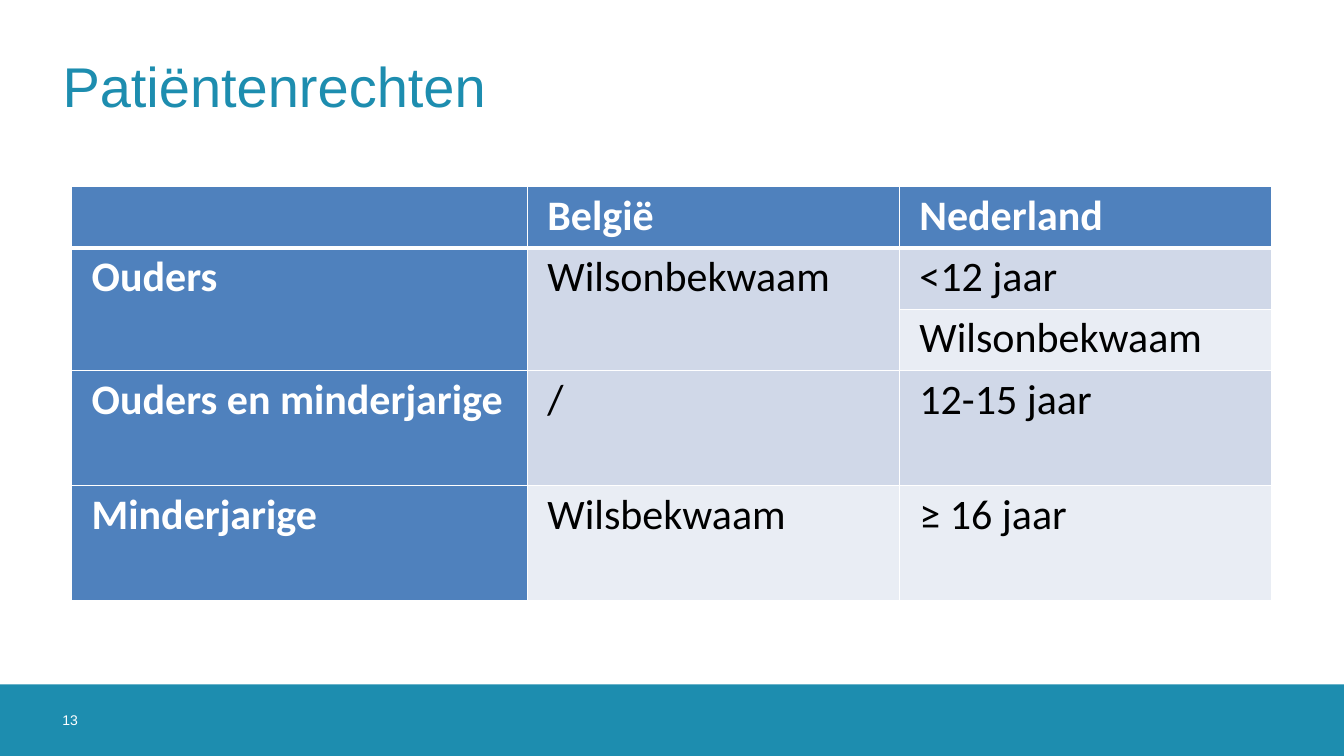
import pptx
import pptx.util
import pptx.dml.color
import pptx.enum.shapes
import pptx.enum.text
import pptx.oxml
import pptx.oxml.ns

Inches = pptx.util.Inches
Pt = pptx.util.Pt
RGBColor = pptx.dml.color.RGBColor
Anchor = pptx.enum.text.MSO_ANCHOR

TEAL = RGBColor(0x1D, 0x8D, 0xAF)
BLUE = RGBColor(0x4F, 0x81, 0xBD)
BAND_DARK = RGBColor(0xD0, 0xD8, 0xE8)
BAND_LIGHT = RGBColor(0xE9, 0xED, 0xF4)
WHITE = RGBColor(0xFF, 0xFF, 0xFF)
BLACK = RGBColor(0, 0, 0)

WIDTH = Inches(13.33)
HEIGHT = Inches(7.5)
LEFT_MARGIN = Inches(0.62)
FOOTER_TOP = Inches(6.79)

COLUMN_WIDTHS = [4.52, 3.69, 3.69]
ROW_HEIGHTS = [0.61, 0.61, 0.61, 1.14, 1.14]
RIGHTS = [
    ["", "België", "Nederland"],
    ["Ouders", "Wilsonbekwaam", "<12 jaar"],
    ["", "", "Wilsonbekwaam"],
    ["Ouders en minderjarige", "/", "12-15 jaar"],
    ["Minderjarige", "Wilsbekwaam", "≥ 16 jaar"],
]


def clear_margins(frame):
    frame.margin_left = frame.margin_right = 0
    frame.margin_top = frame.margin_bottom = 0


def style_font(para, name, size, color, bold=False):
    para.font.name = name
    para.font.size = Pt(size)
    para.font.color.rgb = color
    para.font.bold = bold


def add_title(page, text):
    title = page.shapes.title
    title.left, title.top = LEFT_MARGIN, Inches(0.49)
    title.width, title.height = Inches(12.1), Inches(0.69)
    frame = title.text_frame
    clear_margins(frame)
    frame.vertical_anchor = Anchor.BOTTOM
    frame.text = text
    para = frame.paragraphs[0]
    para.alignment = pptx.enum.text.PP_ALIGN.LEFT
    style_font(para, "Arial", 40, TEAL)


def add_footer(page, number):
    band = page.shapes.add_shape(
        pptx.enum.shapes.MSO_SHAPE.RECTANGLE, 0, FOOTER_TOP, WIDTH, HEIGHT - FOOTER_TOP)
    band.shadow.inherit = False
    band.fill.solid()
    band.fill.fore_color.rgb = TEAL
    band.line.fill.background()
    box = page.shapes.add_textbox(LEFT_MARGIN, Inches(7.06), Inches(0.24), Inches(0.18))
    frame = box.text_frame
    clear_margins(frame)
    frame.word_wrap = True
    frame.text = number
    style_font(frame.paragraphs[0], "Arial", 10, WHITE)


def add_border(cell, side, width):
    cell._tc.get_or_add_tcPr().append(pptx.oxml.parse_xml(
        f'<a:ln{side} {pptx.oxml.ns.nsdecls("a")} w="{Pt(width)}">'
        f'<a:solidFill><a:srgbClr val="{WHITE}"/></a:solidFill></a:ln{side}>'))


def format_cell(cell, text, row, column):
    heading = row == 0 or column == 0
    for side in "LRTB":
        under_header = (row, side) in [(0, "B"), (1, "T")]
        add_border(cell, side, 3 if under_header else 1)
    cell.fill.solid()
    band = BAND_DARK if row % 2 else BAND_LIGHT
    cell.fill.fore_color.rgb = BLUE if heading else band
    cell.margin_left = cell.margin_right = Inches(0.2)
    cell.margin_top = cell.margin_bottom = 0
    cell.text = text
    para = cell.text_frame.paragraphs[0]
    para.line_spacing = 1.07
    para.space_after = Pt(8)
    style_font(para, "Calibri", 30, WHITE if heading else BLACK, heading)


def add_rights_table(page):
    table = page.shapes.add_table(
        len(ROW_HEIGHTS), len(COLUMN_WIDTHS), Inches(0.71), Inches(1.85),
        Inches(sum(COLUMN_WIDTHS)), Inches(sum(ROW_HEIGHTS))).table
    for column, width in zip(table.columns, COLUMN_WIDTHS):
        column.width = Inches(width)
    for row, height in zip(table.rows, ROW_HEIGHTS):
        row.height = Inches(height)
    for row, texts in enumerate(RIGHTS):
        for column, text in enumerate(texts):
            format_cell(table.cell(row, column), text, row, column)
    for column in (0, 1):
        table.cell(1, column).merge(table.cell(2, column))


def main():
    deck = pptx.Presentation()
    deck.slide_width, deck.slide_height = WIDTH, HEIGHT
    page = deck.slides.add_slide(deck.slide_layouts.get_by_name("Title Only"))
    add_footer(page, "13")
    add_title(page, "Patiëntenrechten")
    add_rights_table(page)
    deck.save("out.pptx")


if __name__ == "__main__":
    main()
